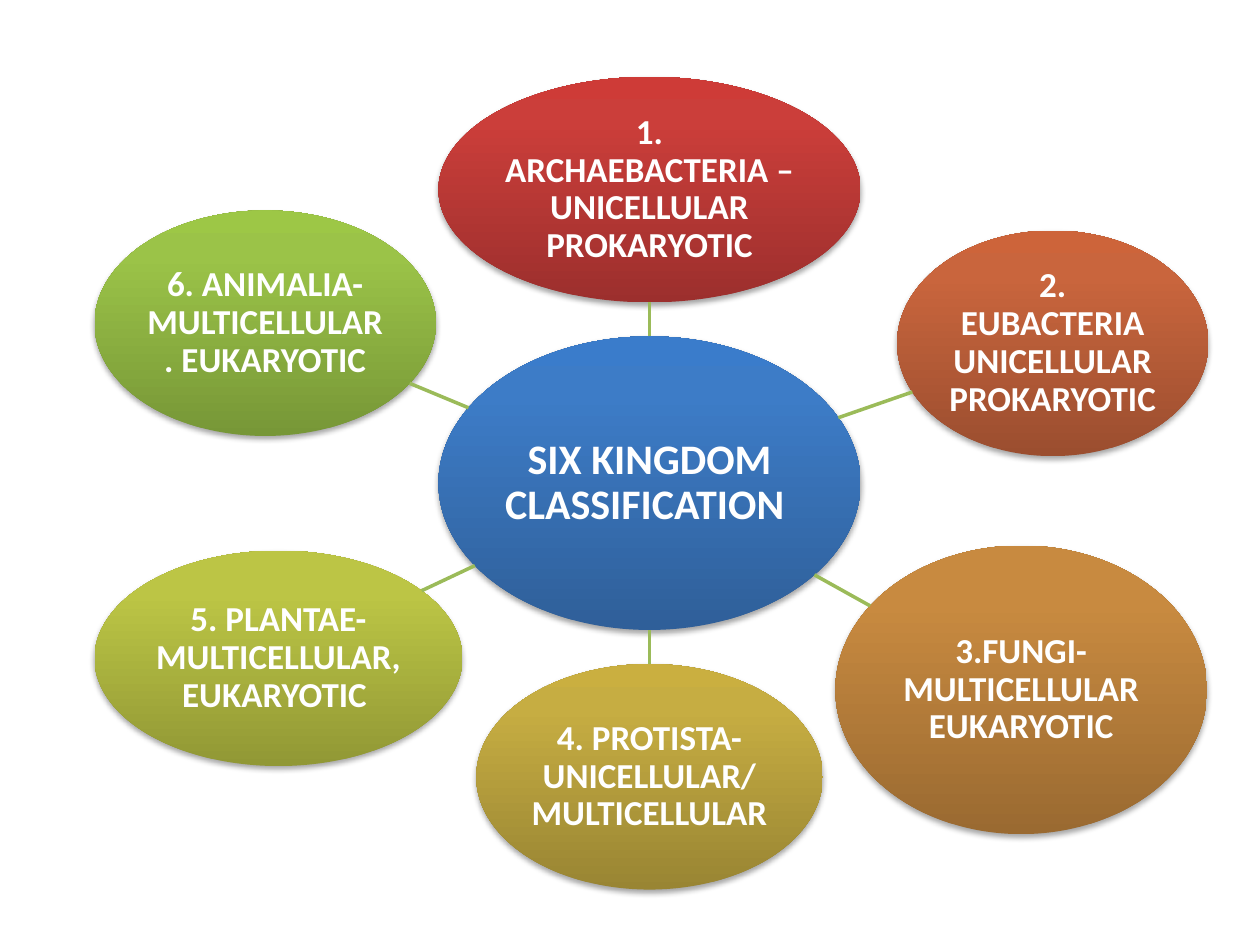
import math

import pptx
import pptx.dml.color
import pptx.enum.shapes
import pptx.enum.text
import pptx.oxml
import pptx.oxml.ns
import pptx.util

RGB = pptx.dml.color.RGBColor
WHITE = RGB(0xFF, 0xFF, 0xFF)
SPOKE = RGB(0x9B, 0xBB, 0x59)
BLUE = RGB(0x2F, 0x5F, 0x99), RGB(0x3D, 0x7C, 0xC7), RGB(0x3A, 0x7C, 0xCB)
RED = RGB(0x9C, 0x2F, 0x2D), RGB(0xCB, 0x3E, 0x3A), RGB(0xCE, 0x3B, 0x37)
RUST = RGB(0x9B, 0x4E, 0x2F), RGB(0xC9, 0x65, 0x3D), RGB(0xCD, 0x64, 0x3A)
ORANGE = RGB(0x9A, 0x6A, 0x31), RGB(0xC8, 0x8A, 0x40), RGB(0xCB, 0x8B, 0x3D)
GOLD = RGB(0x99, 0x85, 0x33), RGB(0xC6, 0xAD, 0x42), RGB(0xCA, 0xAF, 0x40)
OLIVE = RGB(0x91, 0x98, 0x35), RGB(0xBC, 0xC5, 0x45), RGB(0xBF, 0xC8, 0x43)
GREEN = RGB(0x77, 0x97, 0x37), RGB(0x9B, 0xC3, 0x48), RGB(0x9D, 0xC7, 0x46)

prs = pptx.Presentation()
prs.slide_width = pptx.util.Inches(10)
prs.slide_height = pptx.util.Inches(7.5)
s = prs.slides.add_slide(prs.slide_layouts[6])
COL = prs.slide_width / 100
ROW = prs.slide_height / 75
NS = pptx.oxml.ns.nsdecls("a")


def add_bubble(box, colors, text, size, inset):
    """Add a shaded ellipse; box is left, top, width, height in grid units."""
    x, y, w, h = box
    sp = s.shapes.add_shape(pptx.enum.shapes.MSO_SHAPE.OVAL,
                            round(x * COL), round(y * ROW), round(w * COL), round(h * ROW))
    sp.line.fill.background()
    stops = "".join(f'<a:gs pos="{pos}"><a:srgbClr val="{c}"/></a:gs>'
                    for pos, c in zip((0, 80000, 100000), colors))
    sp._element.spPr.find(pptx.oxml.ns.qn("a:prstGeom")).addnext(pptx.oxml.parse_xml(
        f'<a:gradFill {NS} rotWithShape="1"><a:gsLst>{stops}</a:gsLst>'
        '<a:lin ang="16200000" scaled="0"/></a:gradFill>'))
    sp._element.spPr.append(pptx.oxml.parse_xml(
        f'<a:effectLst {NS}><a:outerShdw blurRad="40000" dist="23000" dir="5400000" '
        'rotWithShape="0"><a:srgbClr val="000000"><a:alpha val="35000"/></a:srgbClr>'
        '</a:outerShdw></a:effectLst>'))
    tf = sp.text_frame
    tf.word_wrap = True
    tf.vertical_anchor = pptx.enum.text.MSO_ANCHOR.MIDDLE
    tf.margin_left = tf.margin_right = tf.margin_top = tf.margin_bottom = pptx.util.Inches(inset)
    p = tf.paragraphs[0]
    p.alignment = pptx.enum.text.PP_ALIGN.CENTER
    p.line_spacing = 0.9
    r = p.add_run()
    r.text = text
    r.font.name = "Calibri"
    r.font.size = pptx.util.Pt(size)
    r.font.bold = True
    r.font.color.rgb = WHITE
    return sp


def edge_point(sp, dx, dy):
    """Return where a ray from the ellipse's centre along (dx, dy) leaves it."""
    t = 1 / math.hypot(dx / (sp.width / 2), dy / (sp.height / 2))
    return (round(sp.left + sp.width / 2 + t * dx),
            round(sp.top + sp.height / 2 + t * dy))


hub = add_bubble((34.8, 26.7, 33.5, 23.3), BLUE, "SIX KINGDOM CLASSIFICATION ", 24, 0.02)

kingdoms = [
    ((34.8, 6.1, 33.5, 17.9), RED, "1. ARCHAEBACTERIA –UNICELLULAR PROKARYOTIC"),
    ((71.2, 18.3, 24.7, 17.9), RUST, "2. EUBACTERIA UNICELLULAR PROKARYOTIC"),
    ((66.3, 43.3, 29.5, 22.9), ORANGE, "3.FUNGI- MULTICELLULAR EUKARYOTIC"),
    ((37.8, 52.7, 27.5, 17.9), GOLD, "4. PROTISTA-UNICELLULAR/MULTICELLULAR"),
    ((7.5, 43.7, 29.2, 17.1), OLIVE, "5. PLANTAE-MULTICELLULAR, EUKARYOTIC "),
    ((7.5, 16.7, 27.1, 17.9), GREEN, "6. ANIMALIA- MULTICELLULAR. EUKARYOTIC"),
]
for box, colors, text in kingdoms:
    sp = add_bubble(box, colors, text, 20, 0.01)
    dx = sp.left + sp.width / 2 - hub.left - hub.width / 2
    dy = sp.top + sp.height / 2 - hub.top - hub.height / 2
    spoke = s.shapes.add_connector(pptx.enum.shapes.MSO_CONNECTOR.STRAIGHT,
                                   *edge_point(hub, dx, dy), *edge_point(sp, -dx, -dy))
    spoke.line.color.rgb = SPOKE
    spoke.line.width = pptx.util.Pt(2)
    spoke._element.spPr.append(pptx.oxml.parse_xml(f"<a:effectLst {NS}/>"))

prs.save("out.pptx")
